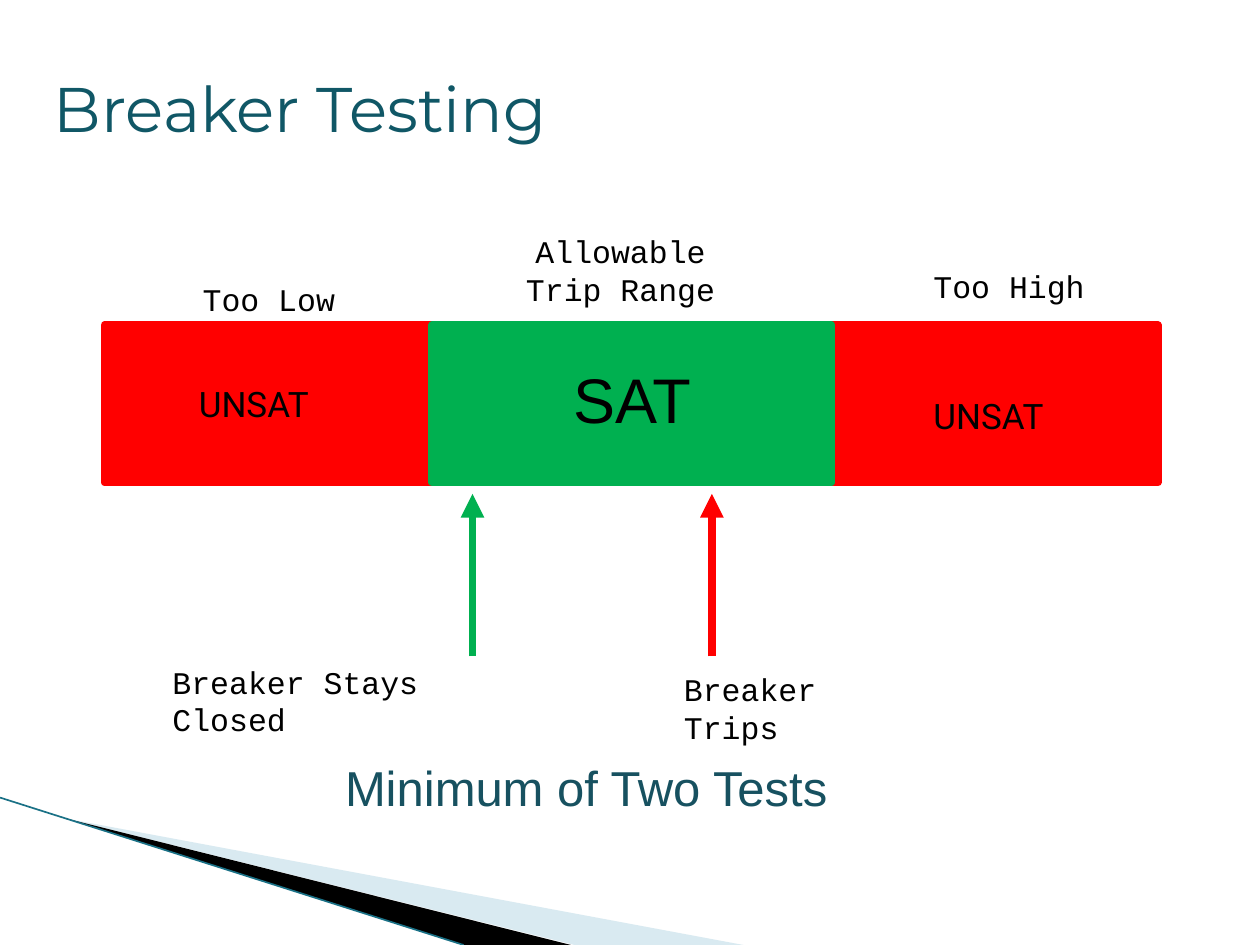
import pptx
import pptx.dml.color
import pptx.enum.shapes
import pptx.enum.text
import pptx.oxml
import pptx.oxml.ns
import pptx.util
from pptx.util import Inches

RED, GREEN, BLACK = "FF0000", "00B050", "000000"
MONO = "Courier New"
NS = 'xmlns:a="http://schemas.openxmlformats.org/drawingml/2006/main"'


def color(code):
    return pptx.dml.color.RGBColor.from_string(code)


def xml(text):
    return pptx.oxml.parse_xml(text)


def label(slide, box, text, size, font, code, wrap=False, center=False):
    """Place one text label in box and return its run."""
    shape = slide.shapes.add_textbox(*map(Inches, box))
    frame = shape.text_frame
    frame.word_wrap = wrap
    frame.text = text
    para = frame.paragraphs[0]
    align = pptx.enum.text.PP_ALIGN
    para.alignment = align.CENTER if center else align.LEFT
    run = para.runs[0]
    run.font.size = pptx.util.Pt(size)
    run.font.name = font
    run.font.color.rgb = color(code)
    return run


def line(slide, start, end, code, width, arrow=False):
    link = slide.shapes.add_connector(
        pptx.enum.shapes.MSO_CONNECTOR.STRAIGHT,
        *map(Inches, start + end))
    link.line.color.rgb = color(code)
    link.line.width = pptx.util.Pt(width)
    if arrow:
        link.line._get_or_add_ln().append(
            xml(f'<a:tailEnd {NS} type="triangle"/>'))
    link._element.spPr.append(xml(f"<a:effectLst {NS}/>"))


def wedge(slide, points, code, alpha=100):
    first, *rest = [tuple(map(Inches, point)) for point in points]
    pen = slide.shapes.build_freeform(*first)
    pen.add_line_segments(rest, close=True)
    shape = pen.convert_to_shape()
    shape.shadow.inherit = False
    shape.fill.solid()
    shape.fill.fore_color.rgb = color(code)
    shape.line.fill.background()
    if alpha < 100:
        tint = shape._element.spPr.find(".//" + pptx.oxml.ns.qn("a:srgbClr"))
        tint.append(xml(f'<a:alpha {NS} val="{alpha * 1000}"/>'))


def swoosh(slide, left, top, base):
    """Corner wedges, running from the left edge down to base."""
    tip = (left + 0.54, top + 0.17)
    wedge(slide, [tip, (left + 5.9, base), (left + 4.56, base)], "A0CBDC", 40)
    wedge(slide, [tip, (left + 4.53, base), (left + 3.68, base)], BLACK)
    line(slide, (left, top), (left + 3.68, base), "1A7186", 0.95)


def title(slide, box):
    run = label(slide, box, "Breaker Testing", 36, "Montserrat", "105766")
    fill = run.font._element.find(pptx.oxml.ns.qn("a:solidFill"))
    fill.addnext(xml(
        f'<a:effectLst {NS}><a:outerShdw blurRad="38100" dist="38100" '
        'dir="2700000" algn="tl"><a:srgbClr val="000000">'
        '<a:alpha val="43000"/></a:srgbClr></a:outerShdw></a:effectLst>'))


def ranges(slide, left, top, width, height):
    """Red bands at both ends, a green band over the middle."""
    band = 3.17
    end = left + width - band
    for x, code in ((left, RED), (end, RED), (left + 2.6, GREEN)):
        shape = slide.shapes.add_shape(
            pptx.enum.shapes.MSO_SHAPE.RECTANGLE,
            *map(Inches, (x, top, band, height)))
        shape.shadow.inherit = False
        shape.fill.solid()
        shape.fill.fore_color.rgb = color(code)
        shape.line.color.rgb = color(code)
        shape.line.width = pptx.util.Pt(4.33)

    # Words on the bands
    for x, y in ((0.65, 0.41), (6.48, 0.5)):
        label(slide, (left + x, top + y, 1.16, 0.44),
              "UNSAT", 20, "Roboto", BLACK)
    label(slide, (left + 3.62, top + 0.23, 1.22, 0.71),
          "SAT", 36, "Arial", BLACK)

    # Captions over the bands
    for text, x, rise, wide, high in (
            ("Too Low", 0.68, 0.41, 1.45, 0.4),
            ("Too High", 6.48, 0.51, 1.45, 0.4),
            ("Allowable Trip Range", 3.03, 0.79, 2.13, 0.71)):
        label(slide, (left + x, top - rise, wide, high),
              text, 18, MONO, BLACK, wrap=True, center=wide > 2)


def tests(slide, top, height):
    """Arrows up to the green band, each with its result below."""
    base = top + height
    for text, x, code, left, drop, wide in (
            ("Breaker Stays Closed", 3.75, GREEN, 1.27, 0, 2.75),
            ("Breaker Trips", 5.65, RED, 5.33, 0.06, 1.83)):
        line(slide, (x, base), (x, top), code, 4.5, arrow=True)
        label(slide, (left, base + drop, wide, 0.71),
              text, 18, MONO, BLACK, wrap=True)


def main():
    deck = pptx.Presentation()
    deck.slide_width, deck.slide_height = Inches(10), Inches(7.5)
    slide = deck.slides.add_slide(deck.slide_layouts[6])
    swoosh(slide, 0, 6.33, 7.5)
    title(slide, (0.33, 0.5, 4.59, 0.71))
    ranges(slide, 0.83, 2.58, 8.36, 1.25)
    tests(slide, 3.92, 1.29)
    label(slide, (2.64, 5.96, 4.8, 0.57),
          "Minimum of Two Tests", 28, "Arial", "175160")
    deck.save("out.pptx")


if __name__ == "__main__":
    main()
